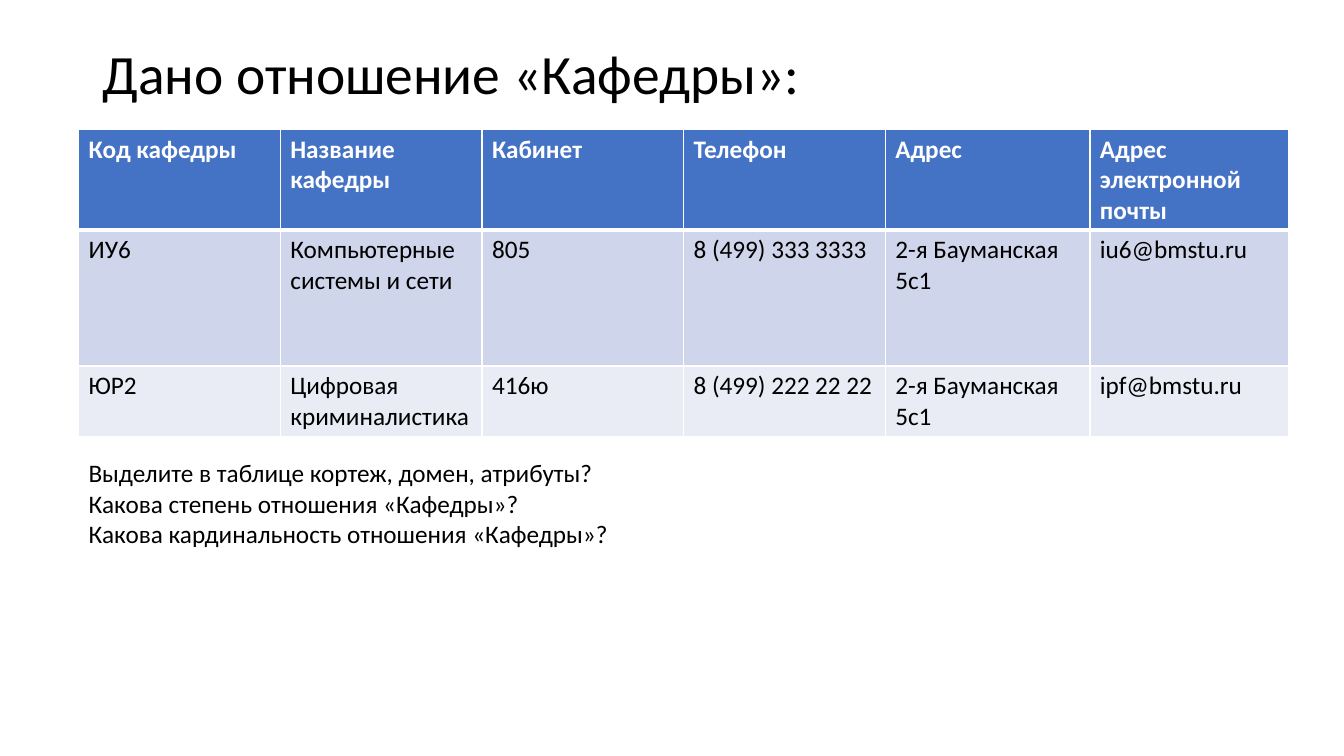
from lxml import etree
from pptx import Presentation
from pptx import util as u
from pptx.dml import color
from pptx.enum import text
from pptx.oxml import ns

COLORS = {
    "text": "000000",
    "header_text": "FFFFFF",
    "border": "FFFFFF",
    "header": "4472C4",
    "odd_row": "CFD5EA",
    "even_row": "E9EBF5",
}
FONT = "Calibri"
BODY_SIZE = 18
COLUMN_WIDTHS = [2, 2, 2, 2, 2.03, 1.97]
ROW_HEIGHTS = [1, 1.35, 0.7]
DEPARTMENTS = [
    ["Код кафедры", "Название кафедры", "Кабинет", "Телефон", "Адрес",
     "Адрес электронной почты"],
    ["ИУ6", "Компьютерные системы и сети", "805", "8 (499) 333 3333",
     "2-я Бауманская 5с1", "iu6@bmstu.ru"],
    ["ЮР2", "Цифровая криминалистика", "416ю", "8 (499) 222 22 22",
     "2-я Бауманская 5с1", "ipf@bmstu.ru"],
]
QUESTIONS = [
    "Выделите в таблице кортеж, домен, атрибуты?",
    "Какова степень отношения «Кафедры»?",
    "Какова кардинальность отношения «Кафедры»?",
]


def rgb(name):
    return color.RGBColor.from_string(COLORS[name])


def set_font(paragraph, size, color_name="text", bold=False):
    font = paragraph.font
    font.name, font.size, font.bold = FONT, u.Pt(size), bold
    font.color.rgb = rgb(color_name)


def add_text(slide, box, lines, size, anchor=text.MSO_ANCHOR.TOP, line_spacing=None):
    frame = slide.shapes.add_textbox(*map(u.Inches, box)).text_frame
    frame.word_wrap = True
    frame.vertical_anchor = anchor
    frame.text = "\n".join(lines)
    for paragraph in frame.paragraphs:
        paragraph.line_spacing = line_spacing
        set_font(paragraph, size)


def add_borders(cell, widths):
    """Draw cell borders; widths maps a side (L, R, T, B) to points."""
    properties = cell._tc.get_or_add_tcPr()
    for side, width in widths.items():
        line = etree.SubElement(properties, ns.qn(f"a:ln{side}"), w=str(u.Pt(width)))
        fill = etree.SubElement(line, ns.qn("a:solidFill"))
        etree.SubElement(fill, ns.qn("a:srgbClr"), val=COLORS["border"])


def add_departments_table(slide, box):
    table = slide.shapes.add_table(
        len(DEPARTMENTS), len(COLUMN_WIDTHS), *map(u.Inches, box)).table
    for column, width in zip(table.columns, COLUMN_WIDTHS):
        column.width = u.Inches(width)
    row_fills = ["header", "odd_row", "even_row"]
    for index, (row, height) in enumerate(zip(table.rows, ROW_HEIGHTS)):
        row.height = u.Inches(height)
        is_header = index == 0
        widths = {"L": 1, "R": 1, "T": 3 if index == 1 else 1, "B": 3 if is_header else 1}
        for cell, value in zip(row.cells, DEPARTMENTS[index]):
            cell.text = value
            set_font(cell.text_frame.paragraphs[0], BODY_SIZE,
                     "header_text" if is_header else "text", is_header)
            add_borders(cell, widths)
            cell.fill.solid()
            cell.fill.fore_color.rgb = rgb(row_fills[index])


def main():
    presentation = Presentation()
    presentation.slide_width = u.Inches(13.33)
    presentation.slide_height = u.Inches(7.5)
    slide = presentation.slides.add_slide(presentation.slide_layouts[6])
    add_text(slide, (0.92, 0.4, 11.5, 0.72), ["Дано отношение «Кафедры»:"], 39.6,
             text.MSO_ANCHOR.MIDDLE, 0.9)
    add_departments_table(slide, (0.78, 1.28, sum(COLUMN_WIDTHS), sum(ROW_HEIGHTS)))
    add_text(slide, (0.78, 4.49, 11.84, 1.01), QUESTIONS, BODY_SIZE)
    presentation.save("out.pptx")


if __name__ == "__main__":
    main()
